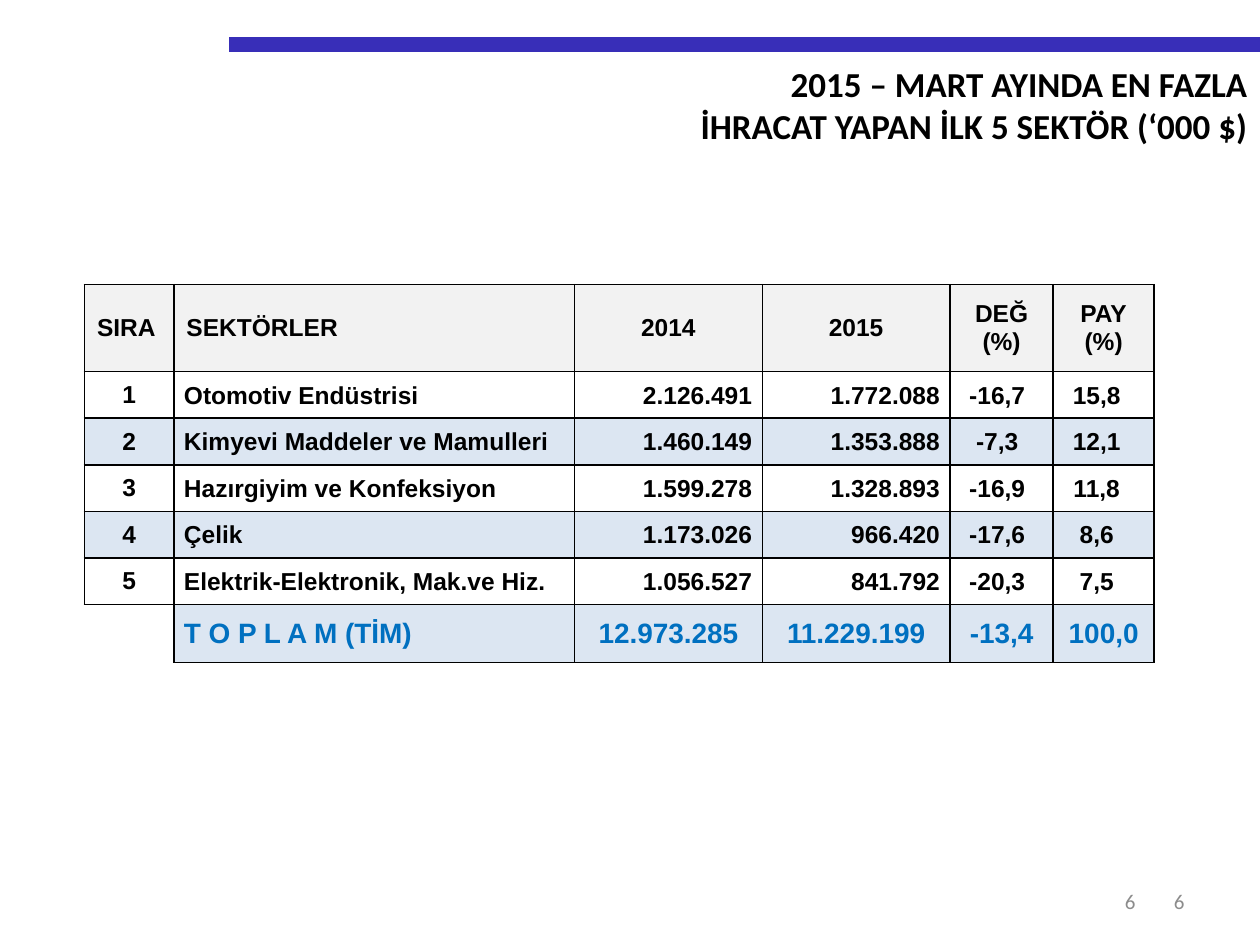
from dataclasses import dataclass

import lxml.etree
import pptx
import pptx.dml.color
import pptx.enum.shapes
import pptx.enum.text
import pptx.oxml.ns
import pptx.presentation
import pptx.slide
import pptx.table
import pptx.util

Inches = pptx.util.Inches
Align = pptx.enum.text.PP_ALIGN
Anchor = pptx.enum.text.MSO_ANCHOR

COLOURS = {
    "black": "000000",
    "bar": "382EB8",
    "page number": "8C8C8C",
    "header": "F2F2F2",
    "band": "DCE6F2",
    "total": "0070C0",
}
COLUMN_WIDTHS = [0.71, 3.18, 1.49, 1.49, 0.82, 0.8]
HEADER_HEIGHT, SECTOR_HEIGHT, TOTAL_HEIGHT = 0.69, 0.37, 0.46
HEADERS = ["SIRA", "SEKTÖRLER", "2014", "2015", "DEĞ\n(%)", "PAY\n(%)"]
SECTORS = [
    ["Otomotiv Endüstrisi", "2.126.491", "1.772.088", "-16,7", "15,8"],
    ["Kimyevi Maddeler ve Mamulleri", "1.460.149", "1.353.888", "-7,3", "12,1"],
    ["Hazırgiyim ve Konfeksiyon", "1.599.278", "1.328.893", "-16,9", "11,8"],
    ["Çelik", "1.173.026", "966.420", "-17,6", "8,6"],
    ["Elektrik-Elektronik, Mak.ve Hiz.", "1.056.527", "841.792", "-20,3", "7,5"],
]
TOTAL = ["T O P L A M (TİM)", "12.973.285", "11.229.199", "-13,4", "100,0"]

HEADER_ALIGNS = [Align.LEFT] * 2 + [Align.CENTER] * 4
SECTOR_ALIGNS = [Align.CENTER, Align.LEFT] + [Align.RIGHT] * 2 + [Align.CENTER] * 2
TOTAL_ALIGNS = [Align.CENTER, Align.LEFT] + [Align.CENTER] * 4

# Left and right cell margins by column
WIDE = (0.1, 0.1)
SECTOR_MARGINS = [WIDE, (0.08, 0.01)] + [(0.01, 0.08)] * 3 + [(0.01, 0.12)]
TOTAL_MARGINS = [WIDE, (0.08, 0.01)] + [(0.01, 0.01)] * 4


@dataclass
class TextStyle:
    font: str
    size: int
    colour: str
    bold: bool = True


@dataclass
class TableRow:
    texts: list[str]
    height: float
    aligns: list[Align]
    margins: list[tuple[float, float]]
    style: TextStyle
    fill: str | None = None


@dataclass
class Label:
    text: str
    left: float
    top: float
    width: float
    height: float
    style: TextStyle
    anchor: Anchor


TITLE_STYLE = TextStyle("Calibri", 20, "black")
NUMBER_STYLE = TextStyle("Calibri", 12, "page number", bold=False)
CELL_STYLE = TextStyle("Arial", 14, "black")
TOTAL_STYLE = TextStyle("Arial", 16, "total")

LABELS = [
    Label("6", 7.17, 6.95, 2.33, 0.4, NUMBER_STYLE, Anchor.MIDDLE),
    Label("6", 7.01, 6.95, 2.1, 0.4, NUMBER_STYLE, Anchor.MIDDLE),
    Label("2015 – MART AYINDA EN FAZLA\nİHRACAT YAPAN İLK 5 SEKTÖR (‘000 $)",
          1.06, 0.45, 8.94, 0.77, TITLE_STYLE, Anchor.TOP),
]


def rgb(name: str) -> pptx.dml.color.RGBColor:
    return pptx.dml.color.RGBColor.from_string(COLOURS[name])


def write_text(frame, text: str, style: TextStyle, align: Align) -> None:
    """Fill a text frame, one paragraph for each line of text."""
    frame.text = text
    for para in frame.paragraphs:
        para.alignment = align
        para.font.name = style.font
        para.font.size = pptx.util.Pt(style.size)
        para.font.bold = style.bold
        para.font.color.rgb = rgb(style.colour)


def add_label(page: pptx.slide.Slide, label: Label) -> None:
    box = page.shapes.add_textbox(Inches(label.left), Inches(label.top),
                                  Inches(label.width), Inches(label.height))
    box.text_frame.word_wrap = True
    box.text_frame.vertical_anchor = label.anchor
    write_text(box.text_frame, label.text, label.style, Align.RIGHT)


def add_bar(page: pptx.slide.Slide) -> None:
    bar = page.shapes.add_connector(pptx.enum.shapes.MSO_CONNECTOR.STRAIGHT,
                                    Inches(1.82), Inches(0.35), Inches(10), Inches(0.35))
    bar.line.color.rgb = rgb("bar")
    bar.line.width = pptx.util.Pt(8.5)
    lxml.etree.SubElement(bar._element.spPr, pptx.oxml.ns.qn("a:effectLst"))


def set_borders(cell: pptx.table._Cell, sides: str) -> None:
    """Draw the sides named by letter (L, R, T, B) and hide the others; call before filling."""
    properties = cell._tc.get_or_add_tcPr()
    for side in "LRTB":
        line = lxml.etree.SubElement(properties, pptx.oxml.ns.qn(f"a:ln{side}"))
        if side in sides:
            line.set("w", str(pptx.util.Pt(1)))
            paint = lxml.etree.SubElement(line, pptx.oxml.ns.qn("a:solidFill"))
            lxml.etree.SubElement(paint, pptx.oxml.ns.qn("a:srgbClr"), val=COLOURS["black"])
        else:
            lxml.etree.SubElement(line, pptx.oxml.ns.qn("a:noFill"))


def fill_cell(cell: pptx.table._Cell, row: TableRow, column: int) -> None:
    text = row.texts[column]
    set_borders(cell, "LRTB" if text else "RT")
    if row.fill and text:
        cell.fill.solid()
        cell.fill.fore_color.rgb = rgb(row.fill)
    else:
        cell.fill.background()
    cell.vertical_anchor = Anchor.MIDDLE
    left, right = row.margins[column]
    cell.margin_left, cell.margin_right = Inches(left), Inches(right)
    if row.margins[column] != WIDE:
        cell.margin_top, cell.margin_bottom = Inches(0.01), 0
    write_text(cell.text_frame, text, row.style, row.aligns[column])


def add_sector_table(page: pptx.slide.Slide) -> None:
    rows = [TableRow(HEADERS, HEADER_HEIGHT, HEADER_ALIGNS, [WIDE] * 6, CELL_STYLE, "header")]
    for rank, sector in enumerate(SECTORS, start=1):
        rows.append(TableRow([str(rank), *sector], SECTOR_HEIGHT, SECTOR_ALIGNS,
                             SECTOR_MARGINS, CELL_STYLE, "band" if rank % 2 == 0 else None))
    rows.append(TableRow(["", *TOTAL], TOTAL_HEIGHT, TOTAL_ALIGNS,
                         TOTAL_MARGINS, TOTAL_STYLE, "band"))

    table = page.shapes.add_table(
        len(rows), len(COLUMN_WIDTHS), Inches(0.67), Inches(2.26),
        Inches(sum(COLUMN_WIDTHS)), Inches(sum(row.height for row in rows))).table
    table.first_row = table.horz_banding = False
    for column, width in enumerate(COLUMN_WIDTHS):
        table.columns[column].width = Inches(width)
    for index, row in enumerate(rows):
        table.rows[index].height = Inches(row.height)
        for column in range(len(COLUMN_WIDTHS)):
            fill_cell(table.cell(index, column), row, column)


def main() -> None:
    deck = pptx.Presentation()
    deck.slide_width, deck.slide_height = Inches(10), Inches(7.5)
    page = deck.slides.add_slide(deck.slide_layouts[6])
    add_bar(page)
    for label in LABELS:
        add_label(page, label)
    add_sector_table(page)
    deck.save("out.pptx")


if __name__ == "__main__":
    main()
